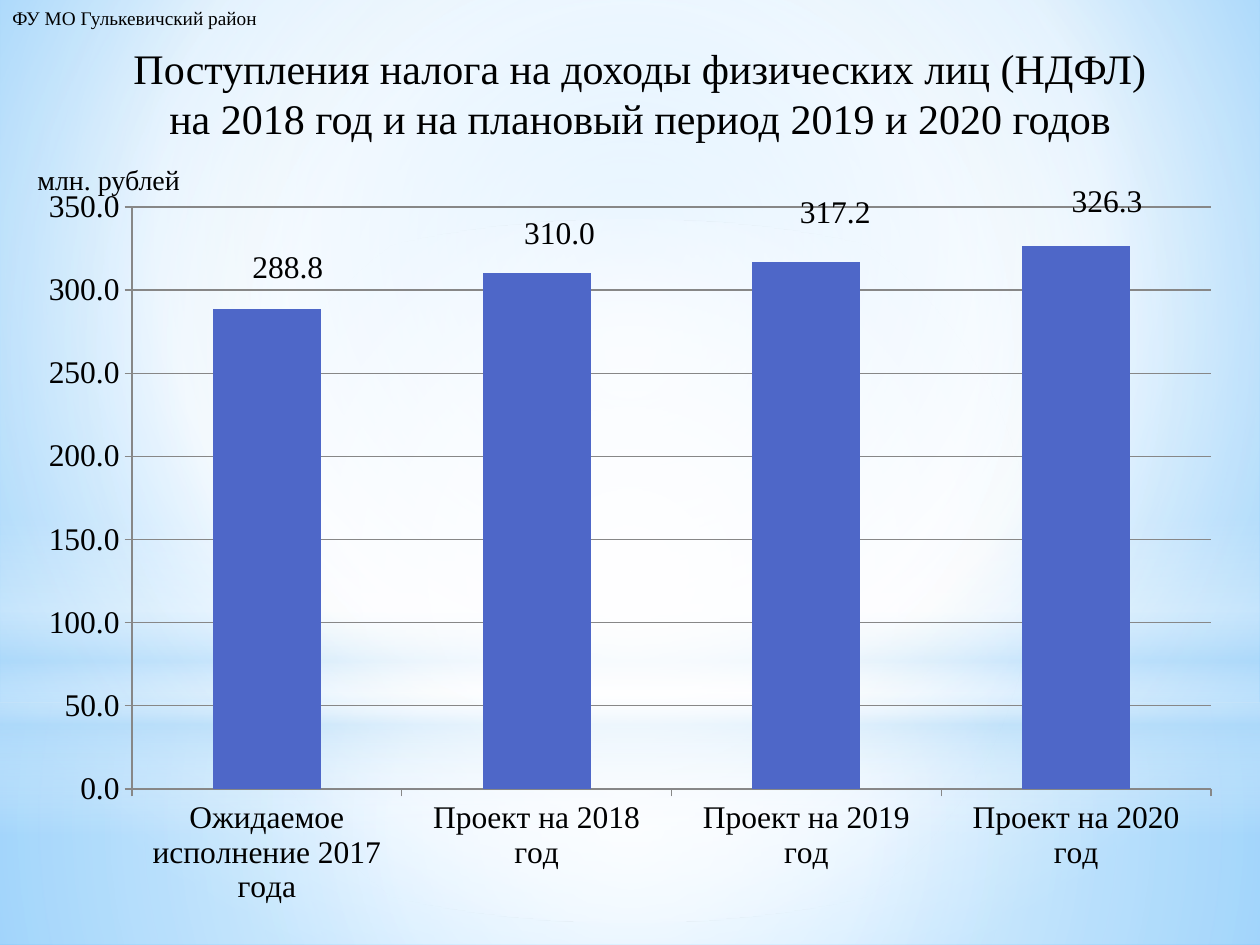
from lxml import etree
from pptx import Presentation, util as u
from pptx.chart.data import CategoryChartData
from pptx.dml.color import RGBColor
from pptx.enum import chart as ch, shapes, text
from pptx.oxml import parse_xml
from pptx.oxml.ns import nsdecls, qn

PX = 914400 // 126
THEME = dict(font="Times New Roman", ink="000000", bar="4E67C8", grid="878787",
             title=24, chart=18, unit=16, source=11)

CENTRE = (50, 50, 50, 50)
BACKGROUND = ([(0, "9ED5FF", 100), (60, "FFFFFF", 100), (100, "5BB9FF", 100)],
              (20, 10, 20, 60))
RECT, OVAL = shapes.MSO_SHAPE.RECTANGLE, shapes.MSO_SHAPE.OVAL
GLOWS = [
    (RECT, (0, 703, 1260, 242),
     [(0, "FFFFFF", 91), (37, "FFFFFF", 76), (100, "B4DCFA", 79)], CENTRE),
    (RECT, (0, 0, 1260, 703),
     [(0, "FFFFFF", 89), (48, "FFFFFF", 62), (100, "B4DCFA", 79)], CENTRE),
    (RECT, (0, 519, 1260, 315),
     [(0, "FFFFFF", 0), (29, "FFFFFF", 30), (45, "B4DCFA", 40),
      (55, "FFFFFF", 26), (65, "B4DCFA", 60), (100, "FFFFFF", 0)], None),
    (OVAL, (0, 220, 1260, 703), [(0, "FFFFFF", 100), (56, "FFFFFF", 0)], CENTRE),
]
TITLE = ("Поступления налога на доходы физических лиц (НДФЛ)\v"
         "на 2018 год и на плановый период 2019 и 2020 годов")
TEXTS = [
    (TITLE, (74, 36, 1132, 136), "title", True),
    ("млн. рублей", (25, 156, 180, 39), "unit", False),
    ("ФУ МО Гулькевичский район", (0, 0, 284, 37), "source", False),
]
CHART_BOX = (25, 175, 1211, 745)
PLOT_BOX = (107, 32, 1079, 582)
BARS = [
    ("Ожидаемое исполнение 2017 года", 288.8, (21, -19)),
    ("Проект на 2018 год", 310.0, (23, -18)),
    ("Проект на 2019 год", 317.2, (29, -27)),
    ("Проект на 2020 год", 326.3, (31, -22)),
]


def px(box):
    return [n * PX for n in box]


def rgb(key):
    return RGBColor.from_string(THEME[key])


def style(font, size):
    font.name, font.size = THEME["font"], u.Pt(THEME[size])
    font.color.rgb = rgb("ink")


def rule(line):
    line.color.rgb, line.width = rgb("grid"), u.Pt(0.75)


def gradient(stops, focus):
    gs = "".join(
        f'<a:gs pos="{pos * 1000}"><a:srgbClr val="{color}">'
        f'<a:alpha val="{alpha * 1000}"/></a:srgbClr></a:gs>'
        for pos, color, alpha in stops)
    if focus:
        sides = " ".join(f'{k}="{v * 1000}"' for k, v in zip("ltrb", focus))
        shade = f'<a:path path="circle"><a:fillToRect {sides}/></a:path>'
    else:
        shade = '<a:lin ang="5400000" scaled="0"/>'
    return parse_xml(f'<a:gradFill {nsdecls("a")} rotWithShape="1">'
                     f'<a:gsLst>{gs}</a:gsLst>{shade}</a:gradFill>')


def set_gradient(parent, stops, focus):
    solid = parent.find(qn("a:solidFill"))
    parent.replace(solid, gradient(stops, focus))


def layout(values, inner=False):
    el = etree.Element(qn("c:layout"))
    manual = etree.SubElement(el, qn("c:manualLayout"))
    items = [("layoutTarget", "inner"), ("xMode", "edge"), ("yMode", "edge")] if inner else []
    for tag, val in items + list(zip("xywh", values)):
        etree.SubElement(manual, qn(f"c:{tag}")).set("val", str(val))
    return el


def fractions(box):
    return [round(n / CHART_BOX[2 + i % 2], 4) for i, n in enumerate(box)]


def add_glow(s, kind, box, stops, focus):
    sp = s.shapes.add_shape(kind, *px(box))
    sp.shadow.inherit = False
    sp.line.fill.background()
    sp.fill.solid()
    set_gradient(sp._element.spPr, stops, focus)


def add_text(s, words, box, size, centred):
    tf = s.shapes.add_textbox(*px(box)).text_frame
    tf.word_wrap = centred
    tf.text = words
    p = tf.paragraphs[0]
    p.alignment = text.PP_ALIGN.CENTER if centred else text.PP_ALIGN.LEFT
    style(p.font, size)


def add_bars(s):
    data = CategoryChartData(number_format="#,##0.0")
    data.categories = [name for name, _, _ in BARS]
    data.add_series("Series 1", [value for _, value, _ in BARS])
    chart = s.shapes.add_chart(ch.XL_CHART_TYPE.COLUMN_CLUSTERED,
                               *px(CHART_BOX), data).chart
    chart.has_legend = chart.has_title = False
    style(chart.font, "chart")
    for axis in (chart.category_axis, chart.value_axis):
        axis.major_tick_mark = ch.XL_TICK_MARK.OUTSIDE
        rule(axis.format.line)
        style(axis.tick_labels.font, "chart")
    axis = chart.value_axis
    axis.minimum_scale, axis.maximum_scale, axis.major_unit = 0, 350, 50
    axis.tick_labels.number_format = "#,##0.0"
    axis.tick_labels.number_format_is_linked = False
    rule(axis.major_gridlines.format.line)

    plot = chart.plots[0]
    plot.gap_width, plot.vary_by_categories = 150, False
    series = plot.series[0]
    series.format.fill.solid()
    series.format.fill.fore_color.rgb = rgb("bar")
    labels = series.data_labels
    labels.show_value = True
    labels.number_format, labels.number_format_is_linked = "#,##0.0", False
    labels.position = ch.XL_LABEL_POSITION.OUTSIDE_END
    style(labels.font, "chart")
    for i, (_, _, shift) in enumerate(BARS):
        label = series.points[i].data_label
        style(label.font, "chart")
        label.position = ch.XL_LABEL_POSITION.OUTSIDE_END
        idx = labels._element.findall(qn("c:dLbl"))[i].find(qn("c:idx"))
        idx.addnext(layout(fractions(shift)))
    for leader in labels._element.findall(qn("c:showLeaderLines")):
        leader.set("val", "0")

    area = chart._chartSpace.chart.plotArea
    for old in area.findall(qn("c:layout")):
        area.remove(old)
    area.insert(0, layout(fractions(PLOT_BOX), inner=True))


def main():
    prs = Presentation()
    prs.slide_width, prs.slide_height = px((1260, 945))
    s = prs.slides.add_slide(prs.slide_layouts[6])
    s.background.fill.solid()
    set_gradient(s._element.find(".//" + qn("p:bgPr")), *BACKGROUND)
    for glow in GLOWS:
        add_glow(s, *glow)
    title, *notes = TEXTS
    add_text(s, *title)
    add_bars(s)
    for note in notes:
        add_text(s, *note)
    prs.save("out.pptx")


if __name__ == "__main__":
    main()
